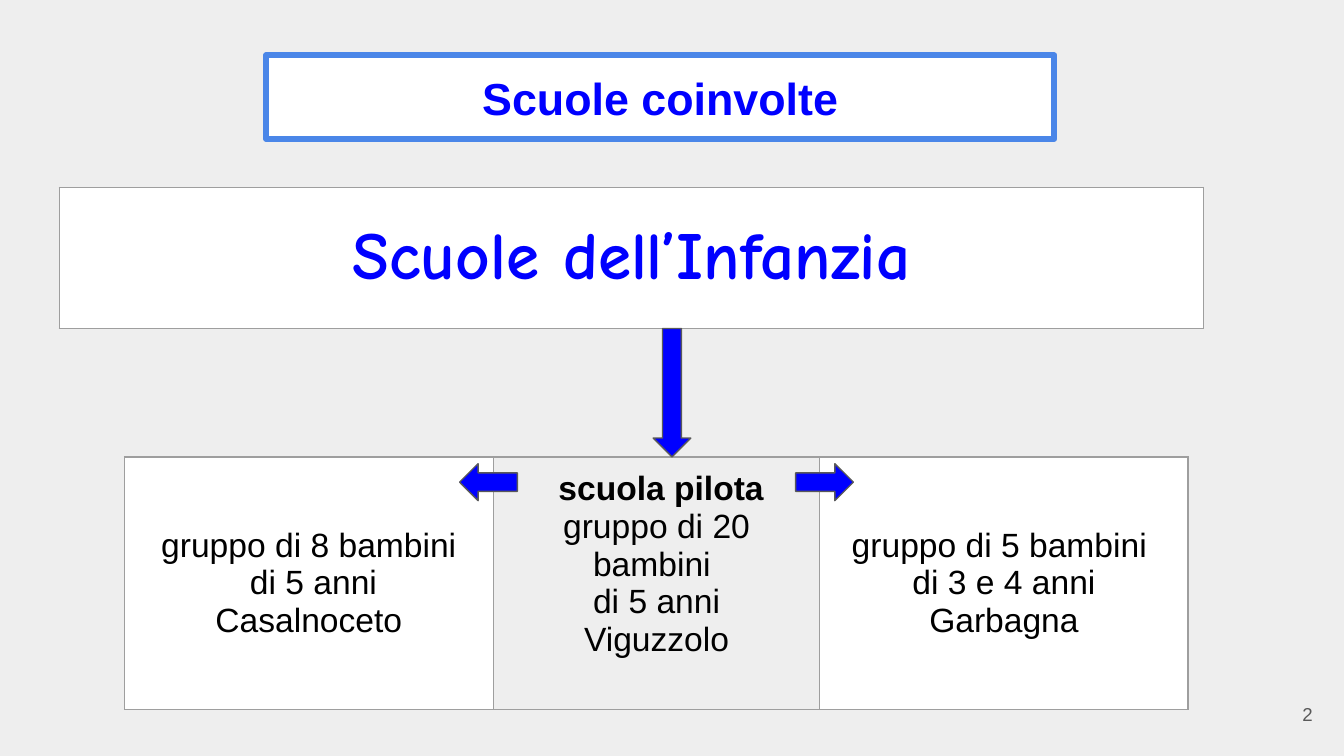
from dataclasses import dataclass

from lxml import etree
from pptx import Presentation
from pptx import util as u
from pptx.dml.color import RGBColor
from pptx.enum import shapes, text
from pptx.oxml import ns

PX = 4572  # EMU in one px, 200 px to the inch
PAD = 20
HUES = {
    "back": "EEEEEE", "white": "FFFFFF", "blue": "0000FF", "frame": "4A86E8",
    "grid": "9E9E9E", "gray": "595959", "black": "000000",
}


@dataclass
class Font:
    size: int
    hue: str
    name: str = "Arial"
    bold: bool = False
    align: text.PP_ALIGN = text.PP_ALIGN.CENTER


@dataclass
class Cell:
    lines: list[str]
    fill: str | None = "white"
    lead: bool = False  # first line in bold
    lift: int = 0  # added to the bottom margin


@dataclass
class Arrow:
    kind: shapes.MSO_SHAPE
    left: int
    top: int
    width: int
    height: int


def rgb(hue: str) -> RGBColor:
    return RGBColor.from_string(HUES[hue])


def px(*sizes: int) -> list[u.Emu]:
    return [u.Emu(size * PX) for size in sizes]


def write(frame, lines: list[str], font: Font, lead: bool = False) -> None:
    for i, line in enumerate(lines):
        para = frame.paragraphs[0] if i == 0 else frame.add_paragraph()
        para.add_run().text = line
        para.alignment = font.align
        para.font.size = u.Pt(font.size)
        para.font.name = font.name
        para.font.bold = font.bold or (lead and i == 0)
        para.font.color.rgb = rgb(font.hue)


def inset(item, lift: int = 0) -> None:
    """Centre the text of a frame or cell vertically and set its margins."""
    item.vertical_anchor = text.MSO_ANCHOR.MIDDLE
    item.margin_left = item.margin_right = item.margin_top = u.Emu(PAD * PX)
    item.margin_bottom = u.Emu((PAD + lift) * PX)


def set_box(shape, lines: list[str], font: Font) -> None:
    frame = shape.text_frame
    frame.word_wrap = True
    frame.auto_size = text.MSO_AUTO_SIZE.NONE
    inset(frame)
    write(frame, lines, font)


def border(cell) -> None:
    props = cell._tc.get_or_add_tcPr()
    for i, side in enumerate("LRTB"):
        line = etree.Element(ns.qn(f"a:ln{side}"), w=str(u.Pt(0.75)))
        fill = etree.SubElement(line, ns.qn("a:solidFill"))
        etree.SubElement(fill, ns.qn("a:srgbClr"), val=HUES["grid"])
        props.insert(i, line)


def add_row(slide, left: int, top: int, height: int, widths: list[int],
            cells: list[Cell], font: Font) -> None:
    """Draw a table of one row."""
    place = px(left, top, sum(widths), height)
    table = slide.shapes.add_table(1, len(cells), *place).table
    table.first_row = table.horz_banding = False
    for i, (width, data) in enumerate(zip(widths, cells)):
        table.columns[i].width = u.Emu(width * PX)
        cell = table.cell(0, i)
        inset(cell, data.lift)
        write(cell.text_frame, data.lines, font, data.lead)
        if data.fill:
            cell.fill.solid()
            cell.fill.fore_color.rgb = rgb(data.fill)
        else:
            cell.fill.background()
        border(cell)


def paint(shape, fill: str, line: str, width: float) -> None:
    shape.fill.solid()
    shape.fill.fore_color.rgb = rgb(fill)
    shape.line.color.rgb = rgb(line)
    shape.line.width = u.Pt(width)


def add_arrow(slide, arrow: Arrow) -> None:
    place = px(arrow.left, arrow.top, arrow.width, arrow.height)
    shape = slide.shapes.add_shape(arrow.kind, *place)
    shape.shadow.inherit = False
    paint(shape, "blue", "gray", 0.75)


def main() -> None:
    deck = Presentation()
    deck.slide_width, deck.slide_height = px(2000, 1125)
    slide = deck.slides.add_slide(deck.slide_layouts[5])
    slide.background.fill.solid()
    slide.background.fill.fore_color.rgb = rgb("back")

    title = slide.shapes.title
    title.left, title.top, title.width, title.height = px(396, 82, 1173, 125)
    paint(title, "white", "frame", 3)
    etree.SubElement(title.line._get_or_add_ln(), ns.qn("a:round"))
    set_box(title, ["Scuole coinvolte"], Font(24, "blue", bold=True))

    number = slide.shapes.add_textbox(*px(1853, 1020, 120, 86))
    set_box(number, ["2"], Font(10, "gray", align=text.PP_ALIGN.RIGHT))

    add_row(slide, 88, 279, 210, [1703], [Cell(["Scuole dell’Infanzia"])],
            Font(36, "blue", "Comic Neue", bold=True))
    schools = [
        Cell(["gruppo di 8 bambini", " di 5 anni", "Casalnoceto"]),
        Cell([" scuola pilota", "gruppo di 20 bambini ", "di 5 anni", "Viguzzolo"],
             fill=None, lead=True, lift=56),
        Cell(["gruppo di 5 bambini ", "di 3 e 4 anni", "Garbagna"]),
    ]
    add_row(slide, 185, 680, 376, [549, 486, 548], schools, Font(18, "black"))

    kinds = shapes.MSO_SHAPE
    for arrow in (
        Arrow(kinds.DOWN_ARROW, 972, 489, 56, 191),
        Arrow(kinds.RIGHT_ARROW, 1184, 690, 86, 55),
        Arrow(kinds.LEFT_ARROW, 684, 690, 86, 55),
    ):
        add_arrow(slide, arrow)

    deck.save("out.pptx")


if __name__ == "__main__":
    main()
